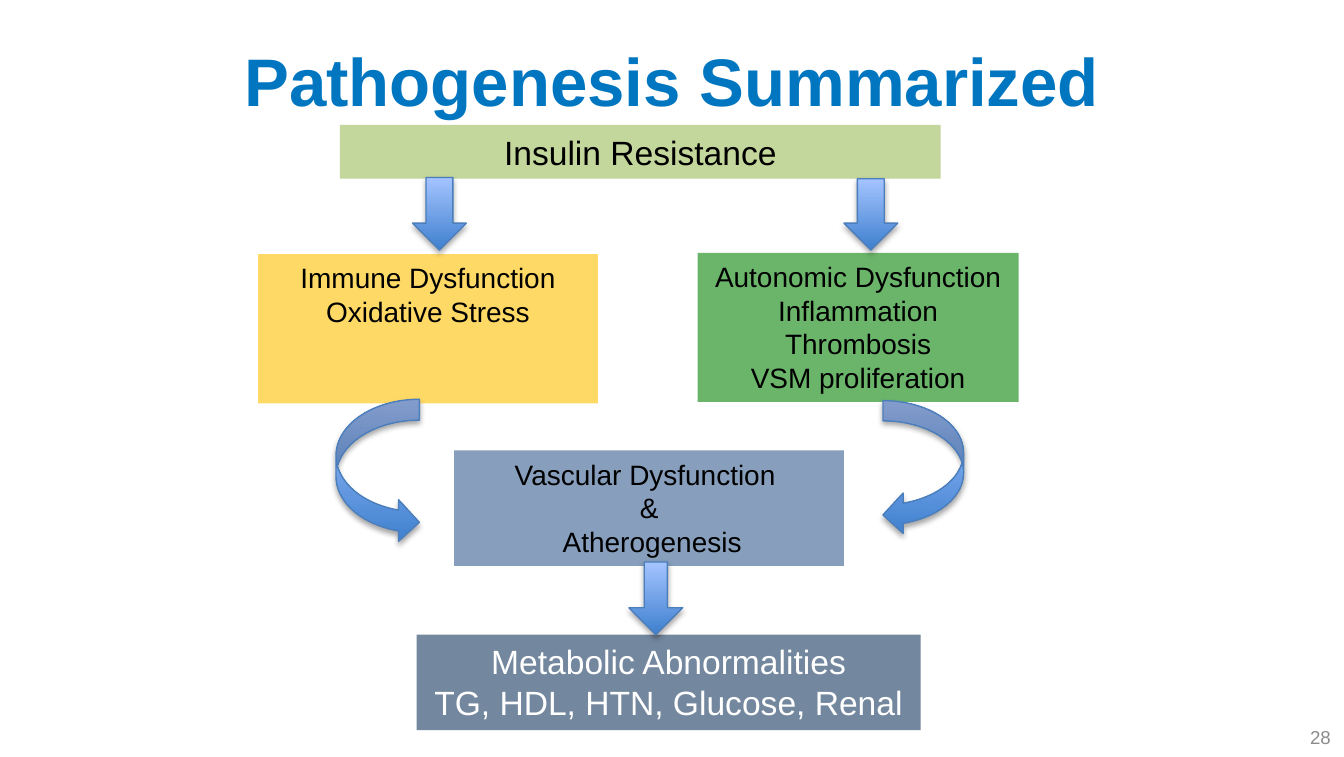
from dataclasses import dataclass

from lxml.etree import SubElement
from pptx import Presentation
from pptx.dml.color import RGBColor
from pptx.enum.shapes import MSO_SHAPE as Kind
from pptx.enum.text import MSO_ANCHOR as Anchor, MSO_AUTO_SIZE as Fit, PP_ALIGN as Align
from pptx.oxml.ns import qn
from pptx.util import Emu, Pt

SCALE = 9144
WIDE, HIGH = 1000, 563
HUES = {
    "title": "0076C0", "black": "000000", "white": "FFFFFF", "number": "8C8C8C",
    "lime": "9BBB59", "green": "008000", "gold": "FFC000", "blue": "376092", "navy": "17375E",
    "dark": "3F80CE", "light": "A4C4FF", "edge": "4B7EBC",
}
FRAME = {"word_wrap": True, "auto_size": Fit.NONE}


@dataclass
class Place:
    left: int
    top: int
    width: int
    height: int

    def emu(self) -> list[Emu]:
        return [px(n) for n in (self.left, self.top, self.width, self.height)]


@dataclass
class Box:
    place: Place
    fill: str
    solid: int
    lines: list[str]
    size: int = 15
    ink: str = "black"


@dataclass
class Arrow:
    place: Place
    kind: Kind = Kind.DOWN_ARROW
    shaft: float | None = None


BOXES = [
    Box(Place(253, 93, 447, 40), "lime", 60, ["Insulin Resistance"], 18),
    Box(Place(519, 188, 239, 111), "green", 58,
        ["Autonomic Dysfunction", "Inflammation", "Thrombosis", "VSM proliferation"]),
    Box(Place(192, 189, 253, 111), "gold", 60, ["Immune Dysfunction", "Oxidative Stress"]),
    Box(Place(338, 335, 290, 86), "blue", 60, ["Vascular Dysfunction ", "&", " Atherogenesis"]),
    Box(Place(310, 472, 375, 71), "navy", 60,
        ["Metabolic Abnormalities", "TG, HDL, HTN, Glucose, Renal"], 18, "white"),
]
ARROWS = [
    Arrow(Place(307, 132, 40, 54)),
    Arrow(Place(628, 133, 40, 53)),
    Arrow(Place(250, 297, 62, 107), Kind.CURVED_RIGHT_ARROW),
    Arrow(Place(657, 298, 60, 100), Kind.CURVED_LEFT_ARROW),
    Arrow(Place(468, 418, 40, 54), shaft=0.43),
]


def px(count: int) -> Emu:
    return Emu(count * SCALE)


def hue(name: str) -> RGBColor:
    return RGBColor.from_string(HUES[name])


def assign(target, values: dict) -> None:
    for name, value in values.items():
        setattr(target, name, value)


def put(shape, place: Place) -> None:
    assign(shape, dict(zip(("left", "top", "width", "height"), place.emu())))


def write(shape, lines: list[str], size: int, ink: str, align=Align.CENTER,
          anchor=Anchor.TOP, bold: bool = False) -> None:
    frame = shape.text_frame
    assign(frame, FRAME | {"vertical_anchor": anchor, "text": "\n".join(lines)})
    for para in frame.paragraphs:
        para.alignment = align
        assign(para.font, {"name": "Arial", "size": Pt(size), "bold": bold})
        para.font.color.rgb = hue(ink)


def draw_box(slide, box: Box) -> None:
    shape = slide.shapes.add_shape(Kind.RECTANGLE, *box.place.emu())
    shape.shadow.inherit = False
    shape.fill.solid()
    shape.fill.fore_color.rgb = hue(box.fill)
    shape.line.fill.background()
    paint = shape._element.spPr.find(qn("a:solidFill")).find(qn("a:srgbClr"))
    SubElement(paint, qn("a:alpha"), val=str(box.solid * 1000))
    write(shape, box.lines, box.size, box.ink)


def draw_arrow(slide, arrow: Arrow) -> None:
    shape = slide.shapes.add_shape(arrow.kind, *arrow.place.emu())
    if arrow.shaft:
        shape.adjustments[0] = arrow.shaft
    shape.fill.gradient()
    shape.fill.gradient_angle = 90
    for stop, name, spot in zip(shape.fill.gradient_stops, ("dark", "light"), (0, 1)):
        stop.color.rgb = hue(name)
        stop.position = spot
    shape.line.color.rgb = hue("edge")
    shape.line.width = Pt(0.75)
    shape.shadow.inherit = False
    effects = shape._element.spPr.find(qn("a:effectLst"))
    shade = SubElement(effects, qn("a:outerShdw"), blurRad=str(Pt(3.1)), dist=str(Pt(1.8)),
                       dir="5400000", rotWithShape="0")
    tint = SubElement(shade, qn("a:srgbClr"), val=HUES["black"])
    SubElement(tint, qn("a:alpha"), val="35000")


def main() -> None:
    deck = Presentation()
    assign(deck, {"slide_width": px(WIDE), "slide_height": px(HIGH)})
    slide = deck.slides.add_slide(deck.slide_layouts[5])
    title = slide.shapes.title
    put(title, Place(50, 24, 900, 70))
    write(title, ["Pathogenesis Summarized"], 36, "title", anchor=Anchor.MIDDLE, bold=True)
    number = slide.shapes.add_textbox(*Place(767, 533, 233, 30).emu())
    write(number, ["28"], 10, "number", Align.RIGHT, Anchor.MIDDLE)
    for box in BOXES:
        draw_box(slide, box)
    for arrow in ARROWS:
        draw_arrow(slide, arrow)
    deck.save("out.pptx")


if __name__ == "__main__":
    main()
